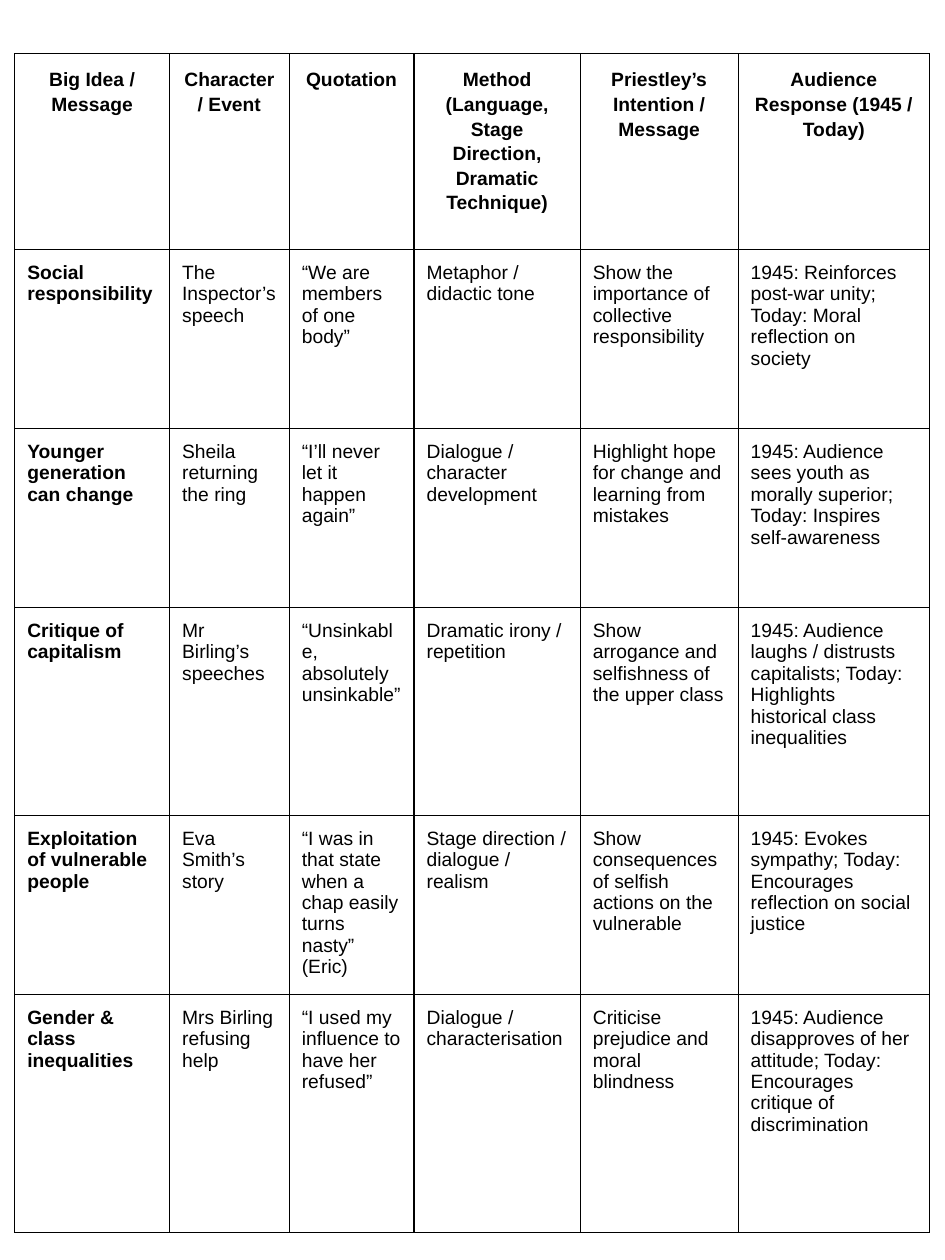
import pptx
import pptx.dml.color
import pptx.enum.text
import pptx.oxml
import pptx.oxml.ns
import pptx.util

Pt = pptx.util.Pt
COLOURS = {"ink": "000000", "paper": "FFFFFF"}
COLUMN_WIDTHS = [88.5, 68.4, 71.3, 95, 90.2, 109.5]
ROW_HEIGHTS = [111.8, 102.3, 102.3, 118.8, 102.3, 136]
ROWS = [
    ["Big Idea / Message", "Character / Event", "Quotation",
     "Method (Language, Stage Direction, Dramatic Technique)",
     "Priestley’s Intention / Message", "Audience Response (1945 / Today)"],
    ["Social responsibility", "The Inspector’s speech", "“We are members of one body”",
     "Metaphor / didactic tone", "Show the importance of collective responsibility",
     "1945: Reinforces post-war unity; Today: Moral reflection on society"],
    ["Younger generation can change", "Sheila returning the ring",
     "“I’ll never let it happen again”", "Dialogue / character development",
     "Highlight hope for change and learning from mistakes",
     "1945: Audience sees youth as morally superior; Today: Inspires self-awareness"],
    ["Critique of capitalism", "Mr Birling’s speeches", "“Unsinkable, absolutely unsinkable”",
     "Dramatic irony / repetition", "Show arrogance and selfishness of the upper class",
     "1945: Audience laughs / distrusts capitalists; Today: Highlights historical class inequalities"],
    ["Exploitation of vulnerable people", "Eva Smith’s story",
     "“I was in that state when a chap easily turns nasty” (Eric)",
     "Stage direction / dialogue / realism",
     "Show consequences of selfish actions on the vulnerable",
     "1945: Evokes sympathy; Today: Encourages reflection on social justice"],
    ["Gender & class inequalities", "Mrs Birling refusing help",
     "“I used my influence to have her refused”", "Dialogue / characterisation",
     "Criticise prejudice and moral blindness",
     "1945: Audience disapproves of her attitude; Today: Encourages critique of discrimination"],
]


class RevisionPage:
    """Hold the text style and the slide that receives the revision grid."""

    def __init__(self, slide, font="Arial", size=11, inset=7.2, border=0.75):
        self.slide = slide
        self.font = font
        self.size = size
        self.inset = Pt(inset)
        self.border = Pt(border)

    def add_grid(self, left, top, widths, heights, rows):
        frame = self.slide.shapes.add_table(
            len(rows), len(widths), Pt(left), Pt(top), Pt(sum(widths)), Pt(sum(heights)))
        grid = frame.table
        grid.horz_banding = False
        for column, width in zip(grid.columns, widths):
            column.width = Pt(width)
        for row, height in zip(grid.rows, heights):
            row.height = Pt(height)
        for row_index, texts in enumerate(rows):
            for column_index, text in enumerate(texts):
                cell = grid.cell(row_index, column_index)
                self.add_borders(cell)
                self.fill_cell(cell, text, row_index == 0, column_index == 0)

    def fill_cell(self, cell, text, is_header, is_idea):
        cell.margin_left = cell.margin_right = self.inset
        cell.margin_top = cell.margin_bottom = self.inset
        cell.fill.solid()
        cell.fill.fore_color.rgb = pptx.dml.color.RGBColor.from_string(COLOURS["paper"])
        cell.text = text
        para = cell.text_frame.paragraphs[0]
        para.font.name = self.font
        para.font.size = Pt(self.size)
        para.font.bold = is_header or is_idea
        para.font.color.rgb = pptx.dml.color.RGBColor.from_string(COLOURS["ink"])
        if is_header:
            para.alignment = pptx.enum.text.PP_ALIGN.CENTER
            para.line_spacing = 1.15

    def add_borders(self, cell):
        properties = cell._tc.get_or_add_tcPr()
        for side in ("lnL", "lnR", "lnT", "lnB"):
            properties.append(pptx.oxml.parse_xml(
                f'<a:{side} {pptx.oxml.ns.nsdecls("a")} w="{self.border}"><a:solidFill>'
                f'<a:srgbClr val="{COLOURS["ink"]}"/></a:solidFill></a:{side}>'))


def main():
    deck = pptx.Presentation()
    deck.slide_width = Pt(540)
    deck.slide_height = Pt(720)
    page = RevisionPage(deck.slides.add_slide(deck.slide_layouts[6]))
    page.add_grid(8.4, 30.7, COLUMN_WIDTHS, ROW_HEIGHTS, ROWS)
    deck.save("out.pptx")


if __name__ == "__main__":
    main()
